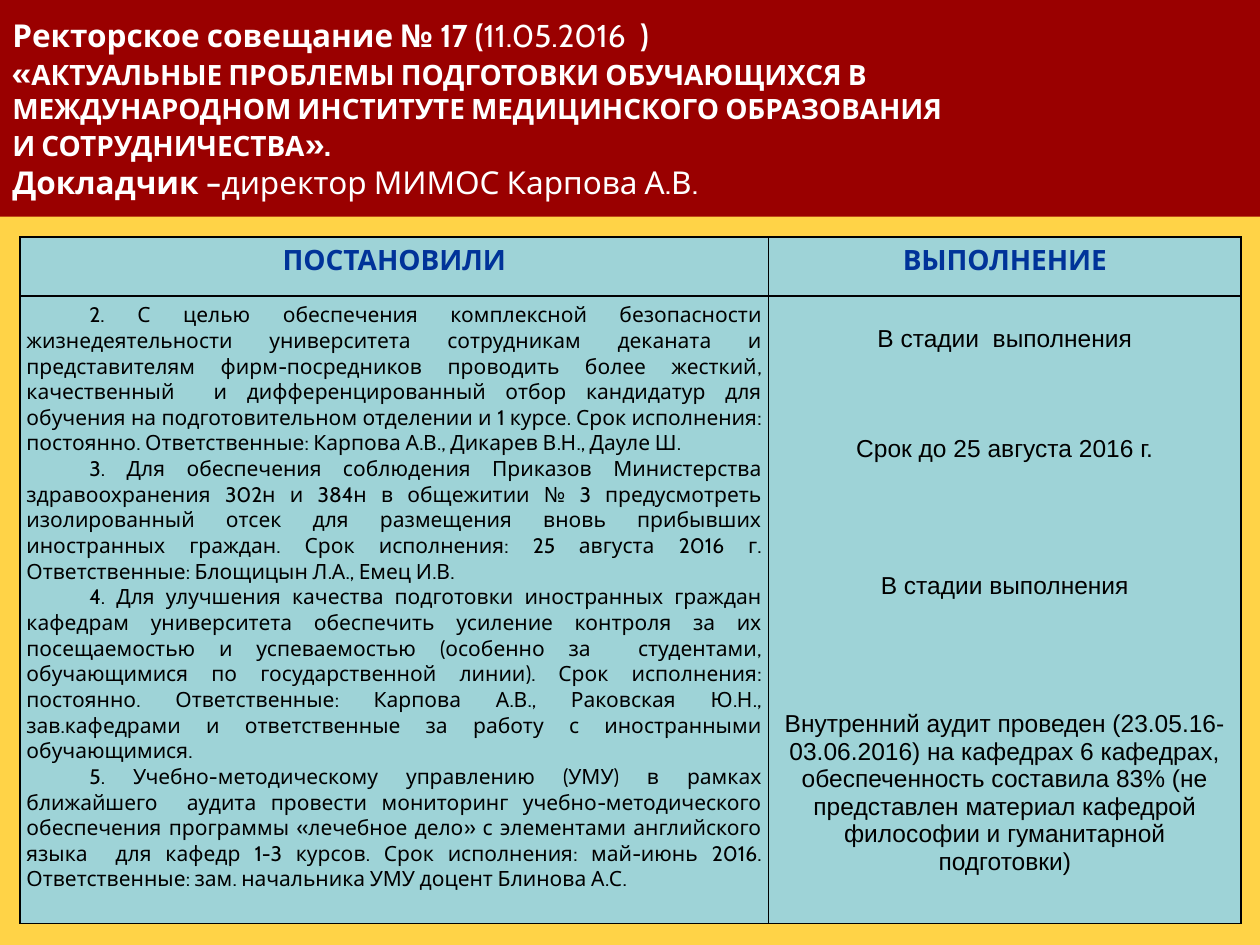
from lxml import etree
from pptx import Presentation
from pptx.dml.color import RGBColor
from pptx.enum.shapes import MSO_SHAPE
from pptx.enum.text import MSO_ANCHOR, PP_ALIGN
from pptx.oxml.ns import qn
from pptx.util import Inches, Pt

YELLOW = RGBColor(0xFF, 0xD3, 0x47)
RED = RGBColor(0x9A, 0x00, 0x00)
TEAL = RGBColor(0x9E, 0xD3, 0xD7)
BLUE = RGBColor(0x00, 0x33, 0x99)
BLACK = RGBColor(0x00, 0x00, 0x00)
WHITE = RGBColor(0xFF, 0xFF, 0xFF)

TITLE = [  # lines of (text, size, bold)
    [("Ректорское совещание № 17 (", 18, True), ("11.05.2016", 18, False), ("  )", 18, True)],
    [("«", 18, True), ("АКТУАЛЬНЫЕ ПРОБЛЕМЫ ПОДГОТОВКИ ОБУЧАЮЩИХСЯ В", 16, True)],
    [("МЕЖДУНАРОДНОМ ИНСТИТУТЕ МЕДИЦИНСКОГО ОБРАЗОВАНИЯ", 16, True)],
    [("И СОТРУДНИЧЕСТВА", 16, True), ("».", 18, True)],
    [("Докладчик –", 18, True), ("директор МИМОС Карпова А.В.", 18, False)],
]
HEADS = ["ПОСТАНОВИЛИ", "ВЫПОЛНЕНИЕ"]
TASKS = [
    "2. С целью обеспечения комплексной безопасности жизнедеятельности университета "
    "сотрудникам деканата и представителям фирм-посредников проводить более жесткий, "
    "качественный  и дифференцированный отбор кандидатур для обучения на подготовительном "
    "отделении и 1 курсе. Срок исполнения: постоянно. Ответственные: Карпова А.В., "
    "Дикарев В.Н., Дауле Ш.",
    "3. Для обеспечения соблюдения Приказов Министерства здравоохранения 302н и 384н в "
    "общежитии № 3 предусмотреть изолированный отсек для размещения вновь прибывших "
    "иностранных граждан. Срок исполнения: 25 августа 2016 г. Ответственные: "
    "Блощицын Л.А., Емец И.В.",
    "4. Для улучшения качества подготовки иностранных граждан кафедрам университета "
    "обеспечить усиление контроля за их посещаемостью и успеваемостью (особенно за  "
    "студентами, обучающимися по государственной линии). Срок исполнения: постоянно. "
    "Ответственные: Карпова А.В., Раковская Ю.Н., зав.кафедрами и ответственные за работу "
    "с иностранными обучающимися.",
    "5. Учебно-методическому управлению (УМУ) в рамках ближайшего  аудита провести "
    "мониторинг учебно-методического обеспечения программы «лечебное дело» с элементами "
    "английского языка  для кафедр 1-3 курсов. Срок исполнения: май-июнь 2016. "
    "Ответственные: зам. начальника УМУ доцент Блинова А.С.",
]
RESULTS = [  # (text, space before in points)
    ("В стадии  выполнения", 0),
    ("Срок до 25 августа 2016 г.", 47),
    ("В стадии выполнения", 63),
    ("Внутренний аудит проведен (23.05.16-03.06.2016) на кафедрах 6 кафедрах, "
     "обеспеченность составила 83% (не представлен материал кафедрой философии и "
     "гуманитарной подготовки)", 63),
]


def add_run(para, text, size, color, bold=False, face="Cabin"):
    run = para.add_run()
    run.text = text
    font = run.font
    font.name, font.size, font.bold = face, Pt(size), bold
    font.color.rgb = color


def style_cell(cell):
    """Give a cell thin black borders, a teal fill and small margins."""
    props = cell._tc.get_or_add_tcPr()
    for side in ("lnL", "lnR", "lnT", "lnB"):
        line = etree.SubElement(props, qn(f"a:{side}"), w=str(Pt(1)))
        fill = etree.SubElement(line, qn("a:solidFill"))
        etree.SubElement(fill, qn("a:srgbClr"), val=str(BLACK))
    cell.fill.solid()
    cell.fill.fore_color.rgb = TEAL
    cell.margin_left = cell.margin_right = Inches(0.05)
    cell.margin_top = cell.margin_bottom = Inches(0.05)


prs = Presentation()
prs.slide_width, prs.slide_height = Inches(10), Inches(7.5)
slide = prs.slides.add_slide(prs.slide_layouts[6])
slide.background.fill.solid()
slide.background.fill.fore_color.rgb = YELLOW

# Table of decisions and results
table = slide.shapes.add_table(2, 2, Inches(0.16), Inches(1.88), Inches(9.69), Inches(5.45)).table
for col, width in zip(table.columns, (5.94, 3.75)):
    col.width = Inches(width)
for row, height in zip(table.rows, (0.47, 4.98)):
    row.height = Inches(height)
for cell in table.iter_cells():
    style_cell(cell)

for i, head in enumerate(HEADS):
    para = table.cell(0, i).text_frame.paragraphs[0]
    para.alignment = PP_ALIGN.CENTER
    add_run(para, head, 16, BLUE, True)

frame = table.cell(1, 0).text_frame
for i, task in enumerate(TASKS):
    para = frame.add_paragraph() if i else frame.paragraphs[0]
    para.alignment = PP_ALIGN.JUSTIFY
    para._p.get_or_add_pPr().set("indent", str(Inches(0.5)))
    add_run(para, task, 12, BLACK)

cell = table.cell(1, 1)
cell.margin_top = Inches(0.23)
frame = cell.text_frame
for i, (text, gap) in enumerate(RESULTS):
    para = frame.add_paragraph() if i else frame.paragraphs[0]
    para.alignment = PP_ALIGN.CENTER
    if gap:
        para.space_before = Pt(gap)
    add_run(para, text, 14, BLACK, face="Arial")

# Title band
band = slide.shapes.add_shape(MSO_SHAPE.RECTANGLE, 0, 0, Inches(10), Inches(1.72))
band.shadow.inherit = False
band.fill.solid()
band.fill.fore_color.rgb = RED
band.line.fill.background()
frame = band.text_frame
frame.word_wrap = True
frame.vertical_anchor = MSO_ANCHOR.MIDDLE
para = frame.paragraphs[0]
para.alignment = PP_ALIGN.LEFT
for i, line in enumerate(TITLE):
    if i:
        para.add_line_break()
    for text, size, bold in line:
        add_run(para, text, size, WHITE, bold)

prs.save("out.pptx")
